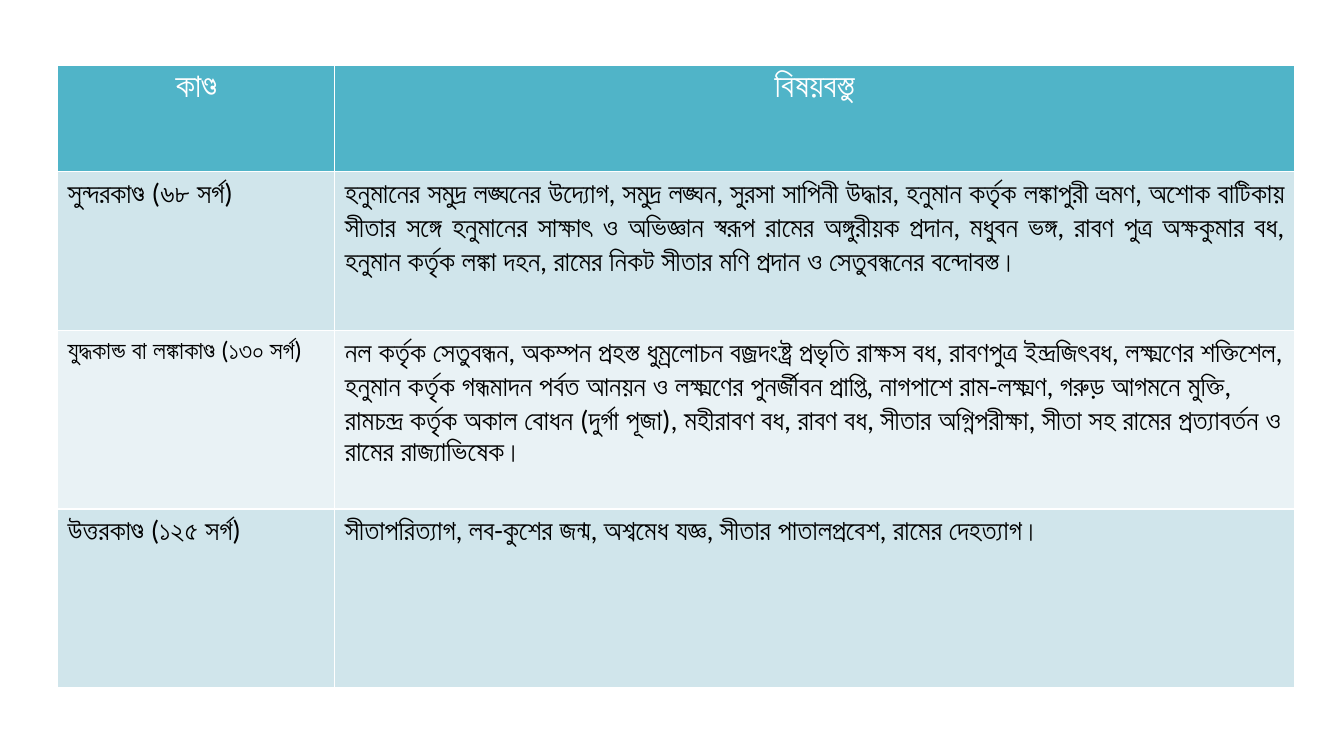
from pptx import Presentation
from pptx.dml.color import RGBColor
from pptx.enum.text import PP_ALIGN
from pptx.util import Pt

FONT = "Calibri"
WIDTHS = [198, 685.4]
HEIGHTS = [75.6, 113.8, 127.4, 127.4]
HEAD, DARK, LIGHT = "50B4C8", "D0E5EB", "E9F2F5"

TITLES = ["কাণ্ড", "বিষয়বস্তু"]
# Each book: name, name size, contents, alignment
BOOKS = [
    ("সুন্দরকাণ্ড (৬৮ সর্গ)", 20,
     "হনুমানের সমুদ্র লঙ্ঘনের উদ্যোগ, সমুদ্র লঙ্ঘন, সুরসা সাপিনী উদ্ধার, "
     "হনুমান কর্তৃক লঙ্কাপুরী ভ্রমণ, অশোক বাটিকায় সীতার সঙ্গে হনুমানের সাক্ষাৎ ও "
     "অভিজ্ঞান স্বরূপ রামের অঙ্গুরীয়ক প্রদান, মধুবন ভঙ্গ, রাবণ পুত্র অক্ষকুমার বধ, "
     "হনুমান কর্তৃক লঙ্কা দহন, রামের নিকট সীতার মণি প্রদান ও সেতুবন্ধনের বন্দোবস্ত।",
     PP_ALIGN.JUSTIFY),
    ("যুদ্ধকান্ড বা লঙ্কাকাণ্ড (১৩০ সর্গ)", 18,
     "নল কর্তৃক সেতুবন্ধন, অকম্পন প্রহস্ত ধুম্রলোচন বজ্রদংষ্ট্র প্রভৃতি রাক্ষস বধ, "
     "রাবণপুত্র ইন্দ্রজিৎবধ, লক্ষ্মণের শক্তিশেল, হনুমান কর্তৃক গন্ধমাদন পর্বত আনয়ন ও "
     "লক্ষ্মণের পুনর্জীবন প্রাপ্তি, নাগপাশে রাম-লক্ষ্মণ, গরুড় আগমনে মুক্তি, "
     "রামচন্দ্র কর্তৃক অকাল বোধন (দুর্গা পূজা), মহীরাবণ বধ, রাবণ বধ, "
     "সীতার অগ্নিপরীক্ষা, সীতা সহ রামের প্রত্যাবর্তন ও রামের রাজ্যাভিষেক।",
     PP_ALIGN.LEFT),
    ("উত্তরকাণ্ড (১২৫ সর্গ)", 20,
     "সীতাপরিত্যাগ, লব-কুশের জন্ম, অশ্বমেধ যজ্ঞ, সীতার পাতালপ্রবেশ, রামের দেহত্যাগ।",
     PP_ALIGN.LEFT),
]


def paint(target, color):
    target.rgb = RGBColor.from_string(color)


def write(frame, text, size=20, color="000000", align=PP_ALIGN.LEFT):
    para = frame.paragraphs[0]
    para.alignment = align
    run = para.add_run()
    run.text = text
    run.font.name = FONT
    run.font.size = Pt(size)
    paint(run.font.color, color)


def fill_cell(cell, text, back, **style):
    cell.fill.solid()
    paint(cell.fill.fore_color, back)
    write(cell.text_frame, text, **style)


def add_grid(slide, left, top):
    frame = slide.shapes.add_table(len(HEIGHTS), len(WIDTHS), Pt(left), Pt(top),
                                   Pt(sum(WIDTHS)), Pt(sum(HEIGHTS)))
    table = frame.table
    for column, width in zip(table.columns, WIDTHS):
        column.width = Pt(width)
    for row, height in zip(table.rows, HEIGHTS):
        row.height = Pt(height)
    return table


def main():
    deck = Presentation()
    deck.slide_width, deck.slide_height = Pt(960), Pt(540)
    slide = deck.slides.add_slide(deck.slide_layouts[6])
    table = add_grid(slide, 41.2, 46.8)

    # Header row
    for col, title in enumerate(TITLES):
        fill_cell(table.cell(0, col), title, HEAD, size=24, color="FFFFFF",
                  align=PP_ALIGN.CENTER)

    # Book rows in alternating shades
    for row, (name, size, story, align) in enumerate(BOOKS, 1):
        back = DARK if row % 2 else LIGHT
        fill_cell(table.cell(row, 0), name, back, size=size, align=align)
        fill_cell(table.cell(row, 1), story, back, align=align)

    deck.save("out.pptx")


if __name__ == "__main__":
    main()
